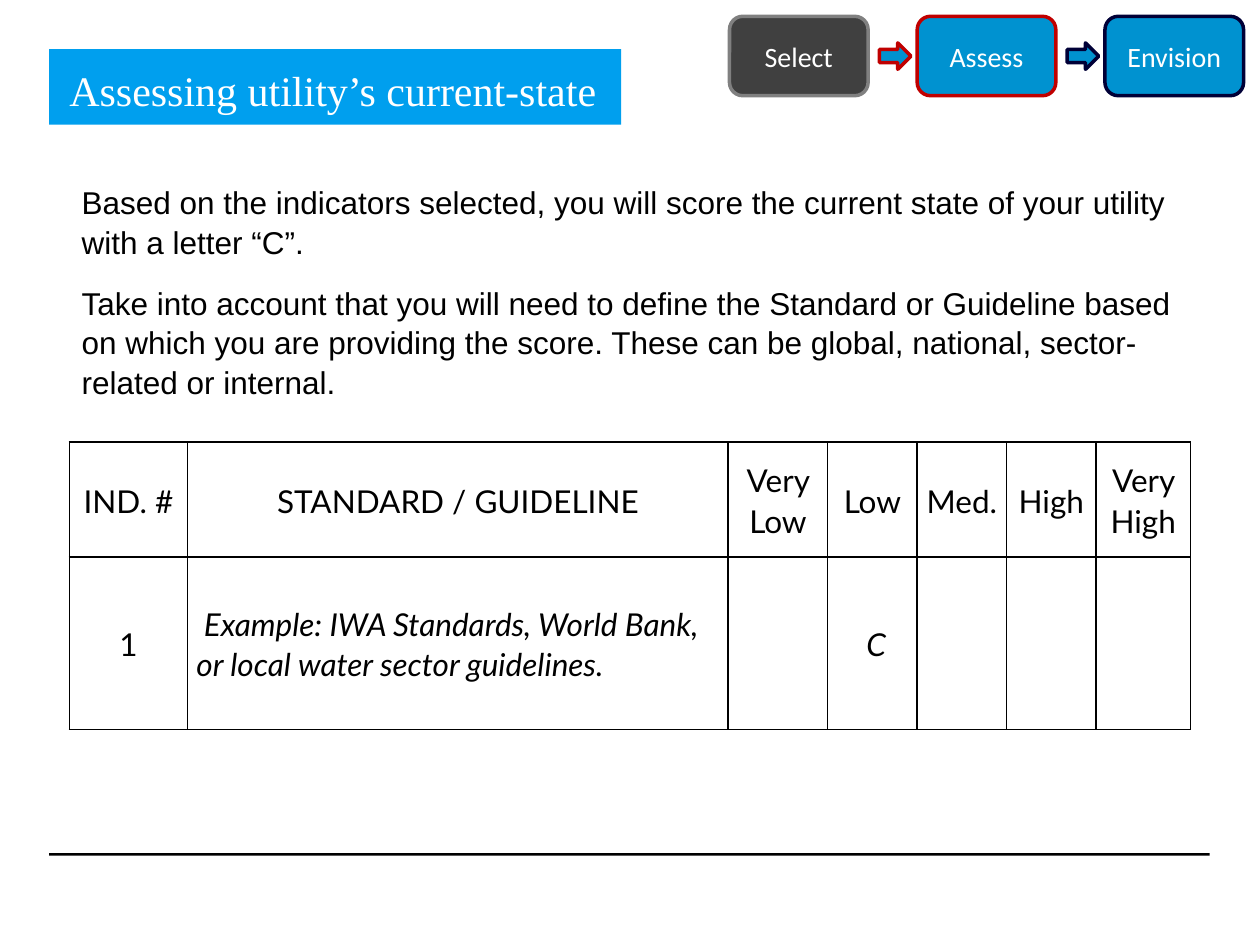
from lxml import etree
from pptx import Presentation
from pptx.dml.color import RGBColor
from pptx.enum.shapes import MSO_SHAPE as Geo
from pptx.enum.text import MSO_ANCHOR as Anchor, PP_ALIGN as Align
from pptx.oxml.ns import qn
from pptx.util import Inches, Pt

BLACK = RGBColor(0, 0, 0)
WHITE = RGBColor(255, 255, 255)
SKY = RGBColor(0x00, 0x9F, 0xEE)
BLUE = RGBColor(0x00, 0x92, 0xD0)
DARK = RGBColor(0x40, 0x40, 0x40)
GREY = RGBColor(0x80, 0x80, 0x80)
RED = RGBColor(0xC0, 0x00, 0x00)
NAVY = RGBColor(0x00, 0x00, 0x37)

# Step name, fill, outline
STEPS = [("Select", DARK, GREY), ("Assess", BLUE, RED), ("Envision", BLUE, NAVY)]
PITCH = 1.49

BODY = [
    "Based on the indicators selected, you will score the current state of "
    "your utility with a letter “C”.",
    "Take into account that you will need to define the Standard or Guideline "
    "based on which you are providing the score. These can be global, "
    "national, sector-related or internal.",
]

COLS = [0.94, 4.29, 0.79, 0.71, 0.71, 0.71, 0.75]
ROWS = [0.91, 1.37]
CELLS = [
    ["IND. #", "STANDARD / GUIDELINE", "Very Low", "Low", "Med.", "High", "Very High"],
    ["1", " Example: IWA Standards, World Bank, or local water sector guidelines.",
     "", " C", "", "", ""],
]


def style(para, face, size, color, align=Align.LEFT):
    para.alignment = align
    font = para.font
    font.name, font.size = face, Pt(size)
    font.color.rgb = color


def add_box(slide, geo, box, fill, edge=None):
    shape = slide.shapes.add_shape(geo, *map(Inches, box))
    shape.shadow.inherit = False
    shape.fill.solid()
    shape.fill.fore_color.rgb = fill
    if edge is None:
        shape.line.fill.background()
    else:
        shape.line.color.rgb = edge
        shape.line.width = Pt(2)
    return shape


def add_title(slide, text):
    frame = add_box(slide, Geo.RECTANGLE, (0.39, 0.39, 4.54, 0.6), SKY).text_frame
    frame.vertical_anchor = Anchor.TOP
    frame.margin_left = Inches(0.16)
    frame.margin_top = Inches(0.12)
    frame.margin_bottom = Inches(0.08)
    frame.text = text
    style(frame.paragraphs[0], "Times New Roman", 24, WHITE)


def add_body(slide, texts):
    box = slide.shapes.add_textbox(*map(Inches, (0.55, 1.39, 8.9, 1.9)))
    frame = box.text_frame
    frame.word_wrap = True
    frame.text = "\n".join(texts)
    for num, para in enumerate(frame.paragraphs):
        para.line_spacing = 1.05
        para.space_after = Pt(6)
        if num:
            para.space_before = Pt(6)
        style(para, "Arial", 18, BLACK)


def add_steps(slide):
    for num, (name, fill, edge) in enumerate(STEPS):
        left = 5.79 + num * PITCH
        box = add_box(slide, Geo.ROUNDED_RECTANGLE, (left, 0.13, 1.1, 0.63), fill, edge)
        frame = box.text_frame
        frame.vertical_anchor = Anchor.MIDDLE
        frame.text = name
        style(frame.paragraphs[0], "Calibri", 16, WHITE, Align.CENTER)
        # Arrow leading into each later step
        if num:
            add_box(slide, Geo.RIGHT_ARROW, (left - 0.3, 0.34, 0.25, 0.21), fill, edge)


def set_edges(cell):
    props = cell._tc.get_or_add_tcPr()
    for num, side in enumerate(("a:lnL", "a:lnR", "a:lnT", "a:lnB")):
        line = etree.Element(qn(side), w=str(Pt(1)))
        fill = etree.SubElement(line, qn("a:solidFill"))
        etree.SubElement(fill, qn("a:srgbClr"), val=str(BLACK))
        props.insert(num, line)


def fill_cell(cell, text, left):
    cell.fill.background()
    set_edges(cell)
    cell.vertical_anchor = Anchor.MIDDLE
    cell.margin_left = cell.margin_right = Inches(0.07)
    cell.margin_top = cell.margin_bottom = 0
    cell.text = text
    para = cell.text_frame.paragraphs[0]
    para.line_spacing = 1.07
    style(para, "Lato", 18, BLACK, Align.LEFT if left else Align.CENTER)
    para.font.italic = text.startswith(" ")


def add_grid(slide):
    area = map(Inches, (0.55, 3.51, sum(COLS), sum(ROWS)))
    table = slide.shapes.add_table(len(ROWS), len(COLS), *area).table
    table.first_row = table.horz_banding = False
    for col, width in zip(table.columns, COLS):
        col.width = Inches(width)
    for row, height, texts in zip(table.rows, ROWS, CELLS):
        row.height = Inches(height)
        for cell, text in zip(row.cells, texts):
            fill_cell(cell, text, text.startswith(" Example"))


def main():
    deck = Presentation()
    deck.slide_width, deck.slide_height = Inches(10), Inches(7.5)
    slide = deck.slides.add_slide(deck.slide_layouts[6])
    # Footer rule
    add_box(slide, Geo.RECTANGLE, (0.39, 6.77, 9.21, 0.02), BLACK)
    # Heading and text
    add_body(slide, BODY)
    add_title(slide, "Assessing utility’s current-state")
    # Score table and step tracker
    add_grid(slide)
    add_steps(slide)
    deck.save("out.pptx")


if __name__ == "__main__":
    main()
